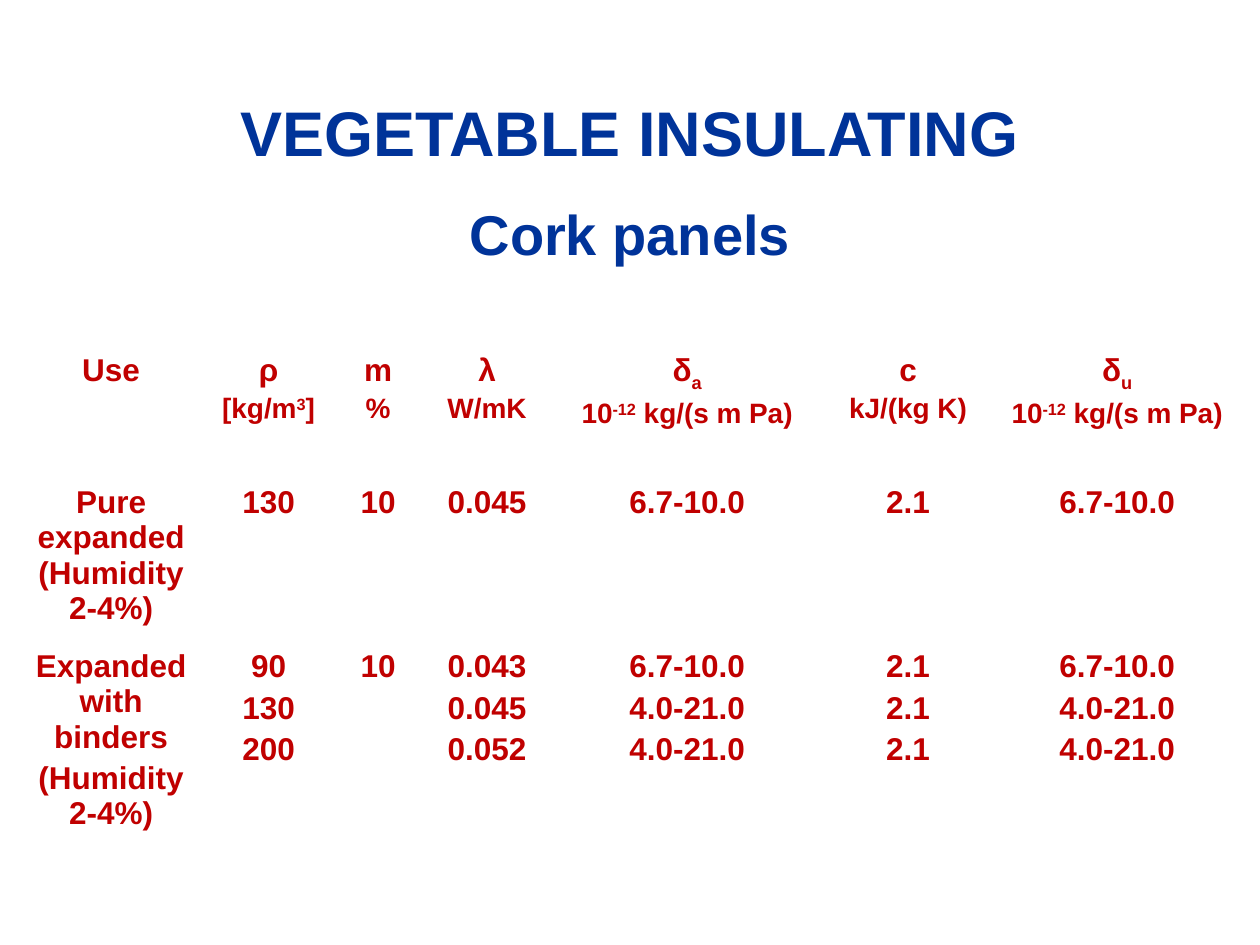
import dataclasses

import pptx
import pptx.dml.color
import pptx.enum.text
import pptx.oxml
import pptx.oxml.ns
import pptx.util

Pt = pptx.util.Pt
RGB = pptx.dml.color.RGBColor.from_string
ALIGN = pptx.enum.text.PP_ALIGN
ANCHOR = pptx.enum.text.MSO_ANCHOR


@dataclasses.dataclass(frozen=True)
class Theme:
    font: str = "Arial"
    heading: str = "003399"
    body: str = "C00000"
    border: str = "FFFFFF"
    title_size: int = 36
    subtitle_size: int = 32
    cell_size: int = 18
    unit_size: int = 16
    outer_line: float = 2.25
    inner_line: float = 1


def write_text(tf, paragraphs, *, sizes, color, font, align=ALIGN.CENTER):
    """Fill tf; a paragraph is a string or a list of strings and (text, baseline %)."""
    for i, (runs, size) in enumerate(zip(paragraphs, sizes)):
        p = tf.add_paragraph() if i else tf.paragraphs[0]
        p.alignment = align
        p.space_before = Pt(0.2 * size if i else 0)
        for run in [runs] if isinstance(runs, str) else runs:
            if run == "\v":
                p.add_line_break()
                continue
            text, baseline = (run, 0) if isinstance(run, str) else run
            r = p.add_run()
            r.text = text
            r.font.name, r.font.size, r.font.bold = font, Pt(size), True
            r.font.color.rgb = RGB(color)
            if baseline:
                r.font._element.set("baseline", str(baseline * 1000))


class Deck:
    def __init__(self, theme, width, height):
        self.theme = theme
        self.prs = pptx.Presentation()
        self.prs.slide_width, self.prs.slide_height = Pt(width), Pt(height)
        self.s = self.prs.slides.add_slide(self.prs.slide_layouts[6])

    def heading(self, text, left, top, width, height, size):
        tf = self.s.shapes.add_textbox(Pt(left), Pt(top), Pt(width), Pt(height)).text_frame
        tf.word_wrap = True
        tf.vertical_anchor = ANCHOR.MIDDLE
        write_text(tf, [text], sizes=[size], color=self.theme.heading, font=self.theme.font)

    def border(self, cell, side, width):
        cell._tc.get_or_add_tcPr().append(pptx.oxml.parse_xml(
            f'<a:ln{side} {pptx.oxml.ns.nsdecls("a")} w="{Pt(width)}"><a:solidFill>'
            f'<a:srgbClr val="{self.theme.border}"/></a:solidFill></a:ln{side}>'))

    def table(self, rows, left, top, widths, heights):
        t = self.theme
        sp = self.s.shapes.add_table(len(heights), len(widths), Pt(left), Pt(top),
                                     Pt(sum(widths)), Pt(sum(heights)))
        table = sp.table
        table.first_row = table.horz_banding = False
        for column, width in zip(table.columns, widths):
            column.width = Pt(width)
        for row, height in zip(table.rows, heights):
            row.height = Pt(height)
        last_row, last_col = len(heights) - 1, len(widths) - 1
        for i, row in enumerate(rows):
            sizes = [t.cell_size] * 3 if i else [t.cell_size, t.unit_size]
            for j, paragraphs in enumerate(row):
                cell = table.cell(i, j)
                outer = {"L": j == 0, "R": j == last_col, "T": i == 0, "B": i == last_row}
                for side, is_outer in outer.items():
                    self.border(cell, side, t.outer_line if is_outer else t.inner_line)
                cell.fill.background()
                write_text(cell.text_frame, paragraphs, sizes=sizes, color=t.body, font=t.font)


PERMEABILITY_UNIT = ["10", ("-12", 30), " kg/(s m Pa)"]
PURE_PERMEABILITY = ["6.7-10.0"]
BINDER_PERMEABILITY = ["6.7-10.0", "4.0-21.0", "4.0-21.0"]
ROWS = [
    [["Use"],
     ["ρ", ["[kg/m", ("3", 30), "]"]],
     ["m", "%"],
     ["λ", "W/mK"],
     [["δ", ("a", -25)], PERMEABILITY_UNIT],
     ["c", "kJ/(kg K)"],
     [["δ", ("u", -25)], PERMEABILITY_UNIT]],
    [[["Pure expanded", "\v", "(Humidity 2-4%)"]],
     ["130"], ["10"], ["0.045"], PURE_PERMEABILITY, ["2.1"], PURE_PERMEABILITY],
    [["Expanded with binders", "(Humidity 2-4%)"],
     ["90", "130", "200"], ["10"], ["0.043", "0.045", "0.052"],
     BINDER_PERMEABILITY, ["2.1"] * 3, BINDER_PERMEABILITY],
]


def main():
    theme = Theme()
    deck = Deck(theme, 720, 540)
    deck.heading("VEGETABLE INSULATING", 36, 54, 648, 42, theme.title_size)
    deck.heading("Cork panels", 204, 110.5, 312, 45.5, theme.subtitle_size)
    deck.table(ROWS, 12, 198, widths=[103, 77, 48.25, 76.25, 152.5, 100, 139],
               heights=[75.5, 93.75, 119.5])
    deck.prs.save("out.pptx")


if __name__ == "__main__":
    main()
